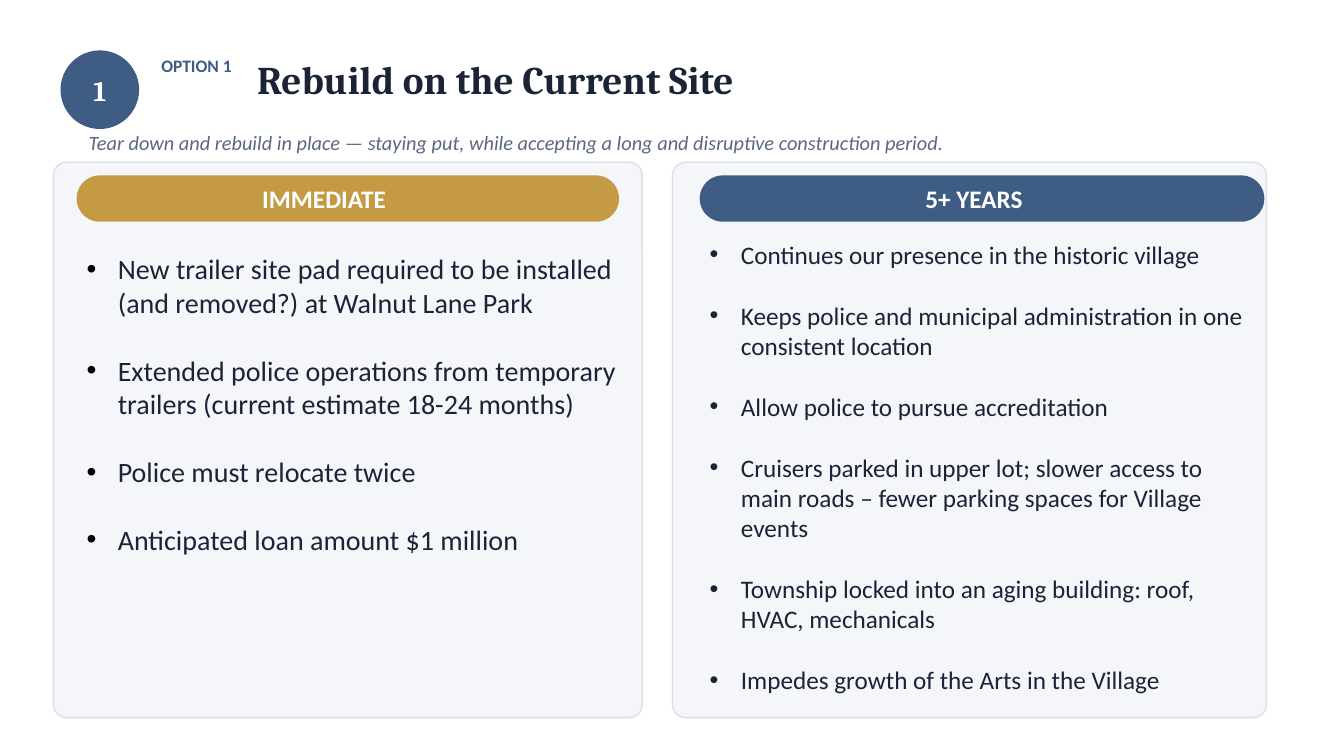
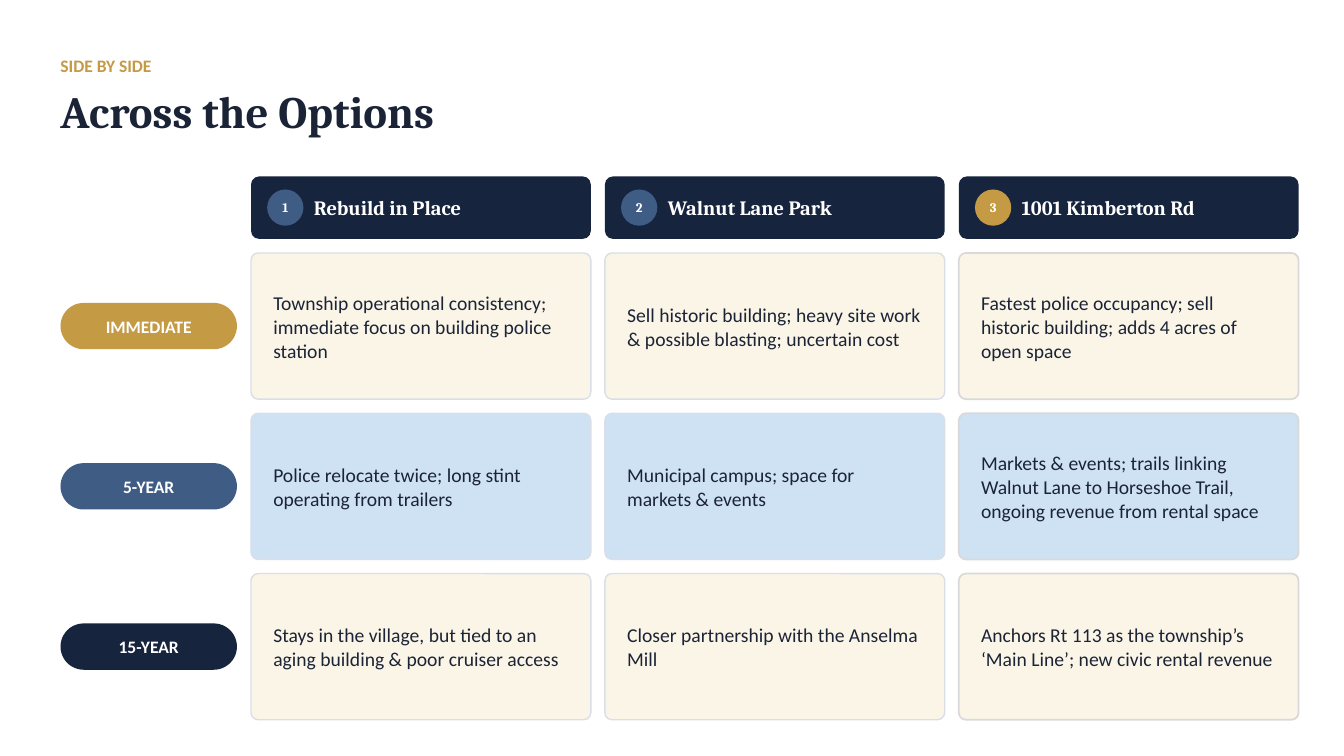
from dataclasses import dataclass
from lxml import etree
from pptx import Presentation
from pptx.dml.color import RGBColor
from pptx.enum.shapes import MSO_SHAPE
from pptx.enum.text import MSO_ANCHOR, PP_ALIGN
from pptx.oxml.ns import qn
from pptx.util import Inches, Pt

ROUND = MSO_SHAPE.ROUNDED_RECTANGLE
OVAL = MSO_SHAPE.OVAL
LEFT, CENTER = PP_ALIGN.LEFT, PP_ALIGN.CENTER
TOP, MIDDLE = MSO_ANCHOR.TOP, MSO_ANCHOR.MIDDLE


@dataclass(frozen=True)
class Theme:
    head: str = "Cambria"
    body: str = "Calibri"
    white: str = "FFFFFF"
    black: str = "000000"
    ink: str = "1B2436"
    muted: str = "5C6880"
    navy: str = "16243D"
    blue: str = "3E5C84"
    gold: str = "C49A45"
    panel: str = "F4F6FA"
    cream: str = "FBF5E7"
    sky: str = "CFE2F3"
    edge: str = "D9DEE8"
    gray: str = "D9D9D9"
    tag: float = 12.5
    note: float = 14.5
    cell: float = 14
    pill: float = 18


T = Theme()


class Deck:
    def __init__(self):
        self.prs = Presentation()
        self.prs.slide_width = Inches(13.33)
        self.prs.slide_height = Inches(7.5)
        self.slide = None

    def page(self):
        self.slide = self.prs.slides.add_slide(self.prs.slide_layouts[6])

    def style(self, shape, text, size, color, font=T.body, bold=False,
              italic=False, align=LEFT, anchor=MIDDLE, pad=(0, 0, 0, 0)):
        frame = shape.text_frame
        frame.text = text
        frame.word_wrap = True
        frame.vertical_anchor = anchor
        frame.margin_left, frame.margin_top, frame.margin_right, frame.margin_bottom = map(Inches, pad)
        for para in frame.paragraphs:
            para.alignment = align
            for run in para.runs:
                run.font.name = font
                run.font.size = Pt(size)
                run.font.bold = bold
                run.font.italic = italic
                run.font.color.rgb = RGBColor.from_string(color)
        return frame

    def label(self, text, box, size, color, **look):
        shape = self.slide.shapes.add_textbox(*map(Inches, box))
        return self.style(shape, text, size, color, **look)

    def shape(self, kind, box, fill, edge=None, width=1.0):
        shape = self.slide.shapes.add_shape(kind, *map(Inches, box))
        shape.shadow.inherit = False
        shape.fill.solid()
        shape.fill.fore_color.rgb = RGBColor.from_string(fill)
        if edge:
            shape.line.color.rgb = RGBColor.from_string(edge)
            shape.line.width = Pt(width)
        else:
            shape.line.fill.background()
        return shape

    def card(self, box, fill, radius, edge=None, width=1.0):
        shape = self.shape(ROUND, box, fill, edge, width)
        shape.adjustments[0] = radius / min(box[2:])
        return shape

    def pill(self, text, box, fill, size, right=0):
        shape = self.card(box, fill, box[3] / 2)
        self.style(shape, text, size, T.white, bold=True, align=CENTER, pad=(0, 0, right, 0))

    def badge(self, text, left, top, side, fill, size):
        shape = self.shape(OVAL, (left, top, side, side), fill)
        self.style(shape, text, size, T.white, font=T.head, bold=True, align=CENTER)

    def tag(self, text, left, color):
        self.label(text, (left, 0.5, 9, 0.3), T.tag, color, bold=True)

    def title(self, text, left, top, height, size):
        self.label(text, (left, top, 10, height), size, T.ink, font=T.head, bold=True)

    def bullets(self, items, box, size, mark):
        frame = self.label("\n".join(items), box, size, T.ink, anchor=TOP,
                           pad=(0.1, 0.05, 0.1, 0.05))
        for i, para in enumerate(frame.paragraphs):
            if i:
                para.space_before = Pt(size * 1.22)
            props = para._p.get_or_add_pPr()
            props.set("marL", str(Inches(0.31)))
            props.set("indent", str(Inches(-0.31)))
            tint = etree.SubElement(props, qn("a:buClr"))
            etree.SubElement(tint, qn("a:srgbClr"), val=mark)
            etree.SubElement(props, qn("a:buFont"), typeface="Arial")
            etree.SubElement(props, qn("a:buChar"), char="•")

    def header(self, num, text, box, dot):
        left, top, _, high = box
        side = 0.36
        shape = self.card(box, T.navy, 0.08)
        self.style(shape, text, T.note, T.white, font=T.head, bold=True, pad=(0.6, 0, 0.08, 0))
        self.badge(num, left + 0.16, top + (high - side) / 2, side, dot, 9.4)

    def cell(self, text, box, fill, edge, width):
        shape = self.card(box, fill, 0.07, edge, width)
        frame = self.style(shape, text, T.cell, T.ink, pad=(0.2, 0.1, 0.2, 0.1))
        frame.paragraphs[0].line_spacing = 1.02


def option(deck):
    deck.page()
    deck.badge("1", 0.6, 0.5, 0.78, T.blue, 20.3)
    deck.tag("OPTION 1", 1.6, T.blue)
    deck.title("Rebuild on the Current Site", 2.55, 0.51, 0.55, 28)
    deck.label("Tear down and rebuild in place — staying put, while accepting a long "
               "and disruptive construction period.",
               (0.88, 1.21, 12.13, 0.4), T.note, T.muted, italic=True)
    for left, wide in ((0.53, 5.84), (6.67, 5.89)):
        deck.card((left, 1.61, wide, 5.51), T.panel, 0.13, T.edge)
    deck.pill("IMMEDIATE", (0.76, 1.74, 5.38, 0.46), T.gold, T.pill, right=0.47)
    deck.pill("5+ YEARS", (6.94, 1.74, 5.6, 0.46), T.blue, T.pill, right=0.16)
    deck.bullets((
        "New trailer site pad required to be installed (and removed?) at Walnut Lane Park",
        "Extended police operations from temporary trailers (current estimate 18-24 months)",
        "Police must relocate twice",
        "Anticipated loan amount $1 million",
    ), (0.76, 2.45, 5.49, 4.6), 20, T.black)
    deck.bullets((
        "Continues our presence in the historic village",
        "Keeps police and municipal administration in one consistent location",
        "Allow police to pursue accreditation",
        "Cruisers parked in upper lot; slower access to main roads – fewer parking spaces for Village events",
        "Township locked into an aging building: roof, HVAC, mechanicals",
        "Impedes growth of the Arts in the Village",
    ), (6.94, 2.32, 5.51, 4.88), 18, T.ink)


def compare(deck):
    deck.page()
    deck.tag("SIDE BY SIDE", 0.6, T.gold)
    deck.title("Across the Options", 0.6, 0.8, 0.6, 32)
    left, top, wide, high, gap = 2.49, 1.75, 3.37, 1.45, 0.14
    bar, pill = 0.62, 0.46
    cols = (
        ("Rebuild in Place", T.blue, T.edge, 1),
        ("Walnut Lane Park", T.blue, T.edge, 1),
        ("1001 Kimberton Rd", T.gold, T.gray, 1.25),
    )
    rows = (
        ("IMMEDIATE", T.gold, T.cream, (
            "Township operational consistency; immediate focus on building police station",
            "Sell historic building; heavy site work & possible blasting; uncertain cost",
            "Fastest police occupancy; sell historic building; adds 4 acres of open space")),
        ("5-YEAR", T.blue, T.sky, (
            "Police relocate twice; long stint operating from trailers",
            "Municipal campus; space for markets & events",
            "Markets & events; trails linking Walnut Lane to Horseshoe Trail, "
            "ongoing revenue from rental space")),
        ("15-YEAR", T.navy, T.cream, (
            "Stays in the village, but tied to an aging building & poor cruiser access",
            "Closer partnership with the Anselma Mill",
            "Anchors Rt 113 as the township’s ‘Main Line’; new civic rental revenue")),
    )
    xs = [left + i * (wide + gap) for i in range(len(cols))]
    for i, (name, dot, _, _) in enumerate(cols):
        deck.header(str(i + 1), name, (xs[i], top, wide, bar), dot)
    for i, (name, color, fill, texts) in enumerate(rows):
        y = top + bar + gap + i * (high + gap)
        deck.pill(name, (0.6, y + (high - pill) / 2, 1.75, pill), color, T.tag)
        for x, text, (_, _, edge, width) in zip(xs, texts, cols):
            deck.cell(text, (x, y, wide, high), fill, edge, width)


def main():
    deck = Deck()
    option(deck)
    compare(deck)
    deck.prs.save("out.pptx")


if __name__ == "__main__":
    main()
